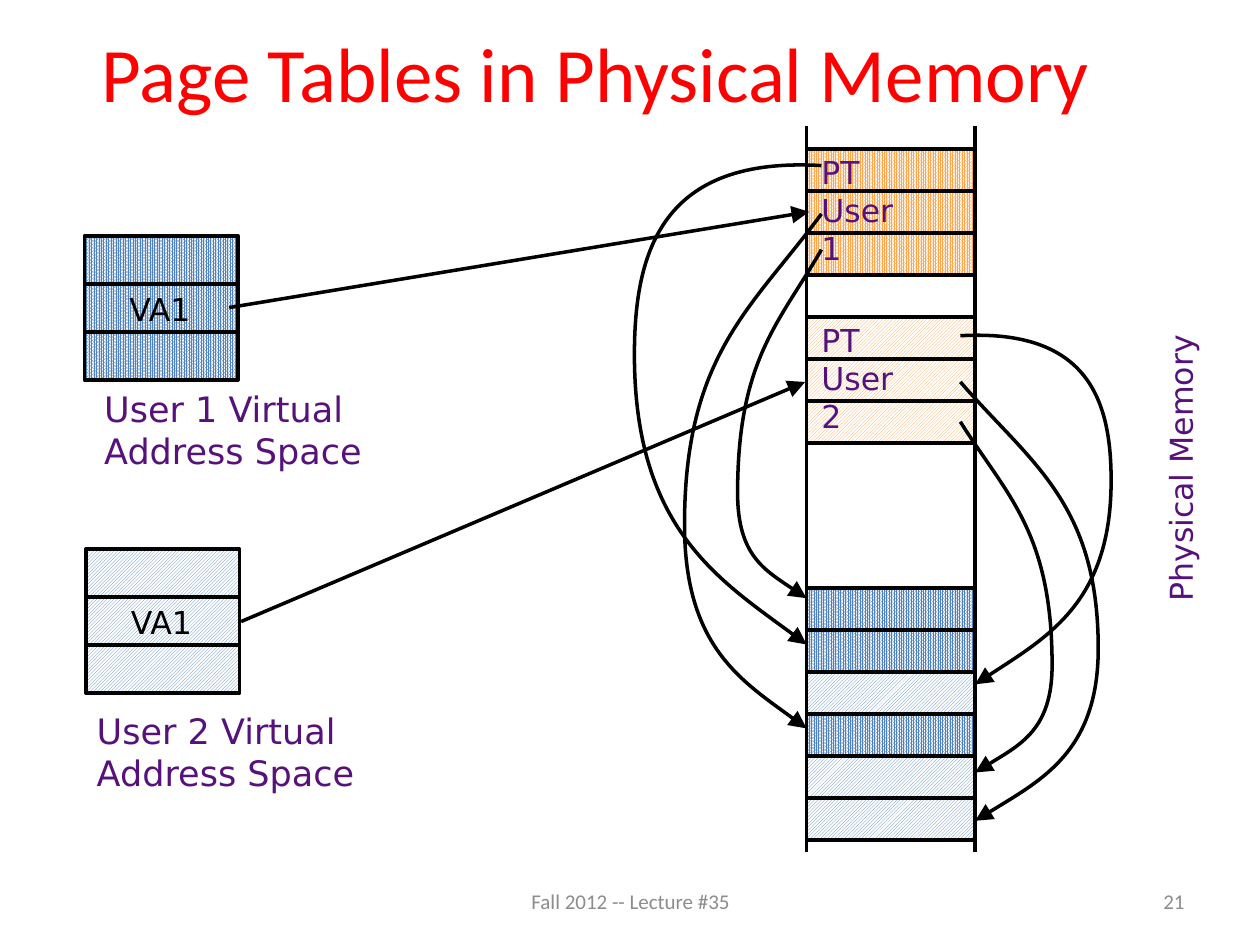
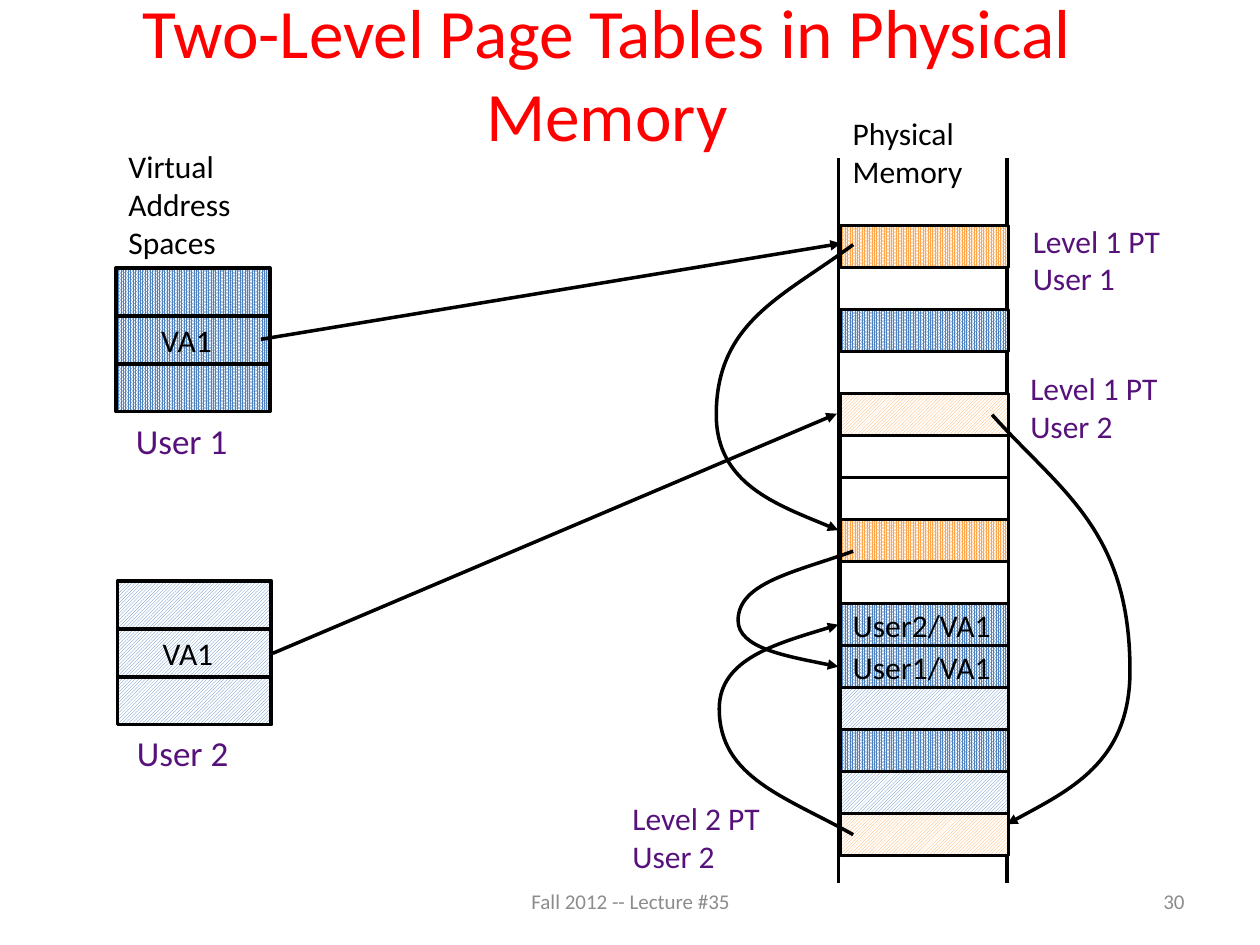
from collections import namedtuple
from pptx import Presentation
from pptx.util import Cm, Pt
from pptx.dml.color import RGBColor as RGB
from pptx.enum.dml import MSO_PATTERN as PATTERN
from pptx.enum.shapes import MSO_SHAPE as SHAPE, MSO_CONNECTOR as CONNECTOR
from pptx.enum.text import MSO_ANCHOR as ANCHOR, MSO_AUTO_SIZE as FIT, PP_ALIGN as ALIGN
from pptx.oxml.ns import qn
from lxml import etree

# Theme shared by both slides
THEME = {
    "title": RGB(0xFF, 0x00, 0x00),
    "label": RGB(0x56, 0x12, 0x7A),
    "ink": RGB(0x00, 0x00, 0x00),
    "footer": RGB(0x8C, 0x8C, 0x8C),
    "paper": RGB(0xFF, 0xFF, 0xFF),
    "user pages": RGB(0x4F, 0x81, 0xBD),
    "page tables": RGB(0xFF, 0xA7, 0x4F),
    "heading_font": "Calibri",
    "caption_size": 20,
    "text_size": 18,
    "footer_size": 12,
    "stroke": Pt(2),
}
CAPTION, TEXT = THEME["caption_size"], THEME["text_size"]

# Memory cells: dense for user 1 (capitals), hatched for user 2 (small letters),
# B/b are user pages, O/o page tables, w is a free cell, a dot leaves a gap
DENSE, HATCHED = PATTERN.PERCENT_90, PATTERN.DARK_UPWARD_DIAGONAL
FILLS = {
    "B": (DENSE, THEME["user pages"]), "b": (HATCHED, THEME["user pages"]),
    "O": (DENSE, THEME["page tables"]), "o": (HATCHED, THEME["page tables"]),
}

# Geometry shared by both slides
CELL_WIDTH, CELL_HEIGHT = Cm(3.39), Cm(2.54) // 3
STACK_WIDTH, STACK_HEIGHT = Cm(3.1), Cm(2.9)
RAILS = {"left": Cm(16.26), "right": Cm(19.66)}
RAIL_TOP, RAIL_BOTTOM = Cm(2.55), Cm(17.17)
OUTWARD = {"left": -1, "right": 1}
TAIL_INSET = Cm(0.3)

# A curved arrow starts inside a cell, bows out from a rail and returns to it.
# Rows count cell heights from the top of the column; reach is the bow in cm.
Arrow = namedtuple("Arrow", "side start_row bow_row end_row reach launch")
Label = namedtuple("Label", "text left top width height size color rotation", defaults=(TEXT, "label", 0))

# Where the first handle lies, as shares of the way from the start to the bow
LAUNCHES = {"slanted": (0.5, 0.3), "level": (0.85, -0.05)}

PAGES = [
    {
        "title": "Page Tables in Physical Memory", "title_left": 0.84, "title_size": 44,
        "number": "21", "font": "DejaVu Sans", "head": "lg", "shift": 0,
        "column_left": 16.26, "column_top": 3,
        "blocks": [(0, "OOOwooo"), (10.46, "BBbBbb")],
        "cell_texts": {},
        "labels": [
            Label("User 1 Virtual Address Space", 1.85, 7.68, 6.63, 1.96, CAPTION),
            Label("User 2 Virtual Address Space", 1.7, 14.17, 6.63, 1.96, CAPTION),
            Label("PT User 1", 16.31, 2.95, 2.49, 2.57),
            Label("PT User 2", 16.31, 6.33, 2.54, 2.57),
            Label("Physical Memory", 20.57, 8.64, 6.45, 1.02, rotation=270),
        ],
        "arrows": [
            Arrow("left", 0.4, 4.9, 11.8, 3.47, "level"),
            Arrow("left", 1.55, 8.95, 13.8, 2.46, "slanted"),
            Arrow("left", 2.4, 8.2, 10.7, 1.39, "slanted"),
            Arrow("right", 4.45, 7.9, 12.75, 2.74, "level"),
            Arrow("right", 5.55, 11.9, 16, 2.48, "slanted"),
            Arrow("right", 6.5, 12.3, 14.85, 1.55, "slanted"),
        ],
    },
    {
        "title": "Two-Level Page Tables in Physical Memory", "title_left": 1.07, "title_size": 39.6,
        "number": "30", "font": "Calibri", "head": "med", "shift": 0.64,
        "column_left": 16.94, "column_top": 4.55,
        "blocks": [(0, "O.B.owwOwBBbBbo")],
        "cell_texts": {9: "User2/VA1", 10: "User1/VA1"},
        "labels": [
            Label("User 1", 2.49, 8.33, 2.79, 1.09, CAPTION),
            Label("User 2", 2.51, 14.63, 2.79, 1.09, CAPTION),
            Label("Level 1 PT User 1", 20.57, 4.34, 4.19, 1.78),
            Label("Level 1 PT User 2", 20.52, 7.32, 3.99, 1.78),
            Label("Level 2 PT User 2", 12.5, 15.98, 4.01, 1.78),
            Label("Virtual Address Spaces", 2.34, 2.84, 3.23, 2.54, color="ink"),
            Label("Physical Memory", 16.94, 2.18, 3.23, 1.78, color="ink"),
        ],
        "arrows": [
            Arrow("left", 0.45, 4.5, 7.25, 2.46, "slanted"),
            Arrow("left", 7.75, 9.4, 10.5, 2.02, "slanted"),
            Arrow("left", 14.5, 11.5, 9.5, 2.4, "slanted"),
            Arrow("right", 4.5, 10.6, 14.25, 2.48, "slanted"),
        ],
    },
]


def outline(item, head=None):
    """Black stroke without shadow, with an arrowhead of the given size."""
    item.line.color.rgb = THEME["ink"]
    item.line.width = THEME["stroke"]
    if head:
        etree.SubElement(item.line._get_or_add_ln(), qn("a:tailEnd"), type="triangle", w=head, len=head)
    etree.SubElement(item._element.spPr, qn("a:effectLst"))


def write(box, text, size, color, font, align=ALIGN.LEFT):
    """One wrapped paragraph, centred vertically in its box."""
    frame = box.text_frame
    frame.word_wrap = True
    frame.auto_size = FIT.NONE
    frame.vertical_anchor = ANCHOR.MIDDLE
    frame.text = text
    para = frame.paragraphs[0]
    para.alignment = align
    para.font.size = Pt(size)
    para.font.name = font
    para.font.color.rgb = color


deck = Presentation()
deck.slide_width, deck.slide_height = Cm(25.4), Cm(19.05)

for content in PAGES:
    page = deck.slides.add_slide(deck.slide_layouts[5])
    shapes = page.shapes
    font, head, shift = content["font"], content["head"], Cm(content["shift"])
    column_left, column_top = Cm(content["column_left"]), Cm(content["column_top"])

    # Title
    title = shapes.title
    title.left, title.top, title.width, title.height = Cm(content["title_left"]), Cm(0.2), Cm(22.33), Cm(2.51)
    write(title, content["title"], content["title_size"], THEME["title"], THEME["heading_font"], ALIGN.CENTER)

    # Virtual address spaces: three pages each, VA1 in the middle
    for code, left, top in (("B", 1.7, 4.76), ("b", 1.73, 11.07)):
        left, top = Cm(left) + shift, Cm(top) + shift
        stack = shapes.add_shape(SHAPE.RECTANGLE, left, top, STACK_WIDTH, STACK_HEIGHT)
        stack.fill.patterned()
        stack.fill.pattern, stack.fill.fore_color.rgb = FILLS[code]
        stack.fill.back_color.rgb = THEME["paper"]
        outline(stack)
        for row in (1, 2):
            y = top + row * STACK_HEIGHT // 3
            outline(shapes.add_connector(CONNECTOR.STRAIGHT, left, y, left + STACK_WIDTH, y))
        entry = shapes.add_textbox(left + Cm(0.66), top + Cm(0.95), Cm(2.2), Cm(1.02))
        write(entry, "VA1", TEXT, THEME["ink"], font)

    # Rails of physical memory
    for rail in RAILS.values():
        outline(shapes.add_connector(CONNECTOR.STRAIGHT, rail + shift, RAIL_TOP + shift,
                                     rail + shift, RAIL_BOTTOM + shift))

    # Cells of physical memory
    for first_row, codes in content["blocks"]:
        for row, code in enumerate(codes):
            if code == ".":
                continue
            cell_top = column_top + round((first_row + row) * CELL_HEIGHT)
            cell = shapes.add_shape(SHAPE.RECTANGLE, column_left, cell_top, CELL_WIDTH, CELL_HEIGHT)
            if code in FILLS:
                cell.fill.patterned()
                cell.fill.pattern, cell.fill.fore_color.rgb = FILLS[code]
                cell.fill.back_color.rgb = THEME["paper"]
            else:
                cell.fill.solid()
                cell.fill.fore_color.rgb = THEME["paper"]
            outline(cell)
            if row in content["cell_texts"]:
                write(cell, content["cell_texts"][row], TEXT, THEME["ink"], font)
                cell.text_frame.margin_right = 0

    # Labels
    for label in content["labels"]:
        box = shapes.add_textbox(Cm(label.left), Cm(label.top), Cm(label.width), Cm(label.height))
        box.rotation = label.rotation
        write(box, label.text, label.size, THEME[label.color], font)

    # Straight arrows from the address spaces to their page tables
    for ends in ((4.62, 6.2, 16.31, 4.27), (4.86, 12.53, 16.23, 7.7)):
        outline(shapes.add_connector(CONNECTOR.STRAIGHT, *(Cm(end) + shift for end in ends)), head)

    # Curved arrows: one Bezier from the start to the bow, one on to the end
    for arrow in content["arrows"]:
        rail, outward = RAILS[arrow.side] + shift, OUTWARD[arrow.side]
        start_x, bow_x, end_x = rail - outward * TAIL_INSET, rail + outward * Cm(arrow.reach), rail
        start_y, bow_y, end_y = (column_top + row * CELL_HEIGHT
                                 for row in (arrow.start_row, arrow.bow_row, arrow.end_row))
        launch_x, launch_y = LAUNCHES[arrow.launch]
        handles = [
            (start_x + launch_x * (bow_x - start_x), start_y + launch_y * (bow_y - start_y)),
            (bow_x, bow_y - 0.55 * (bow_y - start_y)),
            (bow_x, bow_y),
            (bow_x, bow_y + 0.6 * (end_y - bow_y)),
            (end_x - 0.45 * (end_x - bow_x), end_y - 0.2 * (end_y - bow_y)),
            (end_x, end_y),
        ]
        builder = shapes.build_freeform(start_x, start_y)
        builder.add_line_segments(handles, close=False)
        curve = builder.convert_to_shape()

        # Every three straight steps become one Bezier segment
        steps = list(curve._element.iter(qn("a:lnTo")))
        track = steps[0].getparent()
        for first in (0, 3):
            bezier = etree.SubElement(track, qn("a:cubicBezTo"))
            for step in steps[first:first + 3]:
                bezier.append(step[0])
                track.remove(step)
        curve.fill.background()
        outline(curve, head)

    # Footer and slide number
    for text, left, width, align in (("Fall 2012 -- Lecture #35", 8.69, 8.05, ALIGN.CENTER),
                                     (content["number"], 18.21, 5.92, ALIGN.RIGHT)):
        footer = shapes.add_textbox(Cm(left), Cm(17.65), Cm(width), Cm(1.02))
        write(footer, text, THEME["footer_size"], THEME["footer"], THEME["heading_font"], align)

deck.save("out.pptx")
